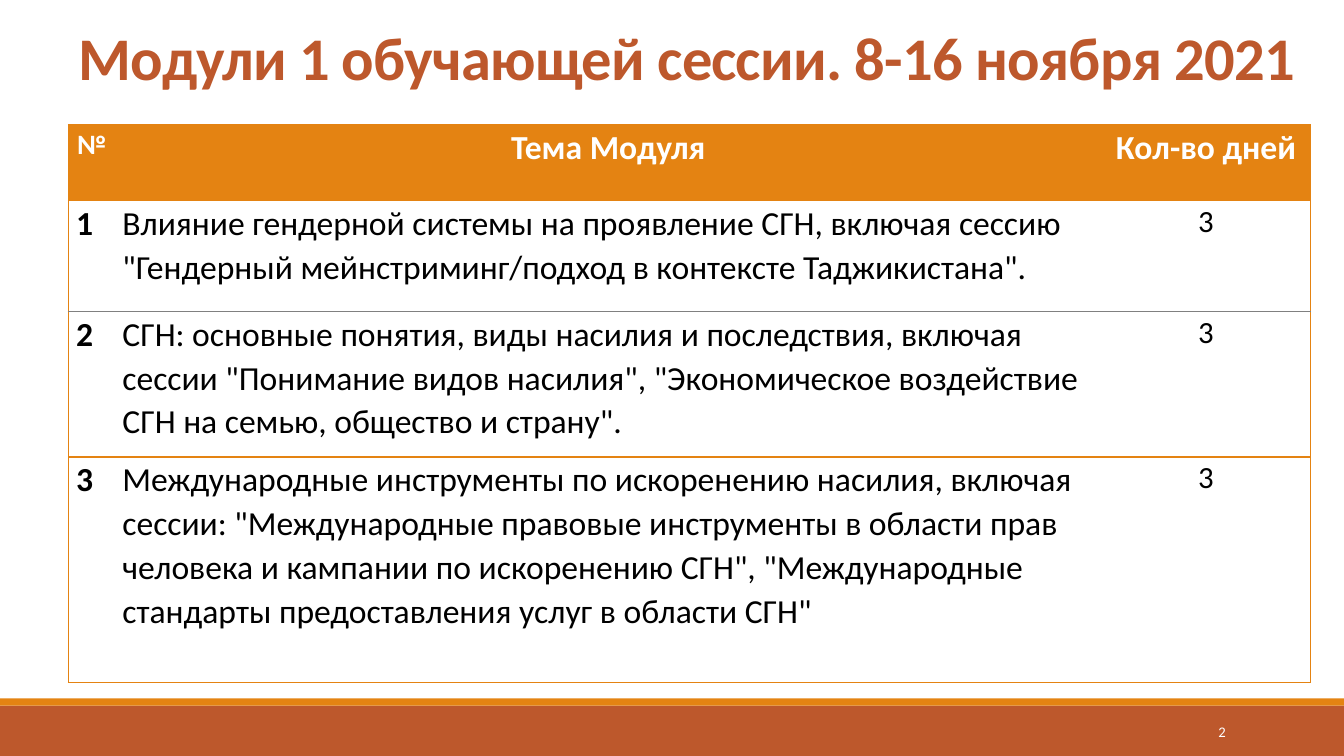
from dataclasses import dataclass

from lxml import etree
from pptx import Presentation
from pptx.dml.color import RGBColor
from pptx.enum.shapes import MSO_SHAPE
from pptx.enum.text import MSO_ANCHOR, PP_ALIGN
from pptx.oxml.ns import qn
from pptx.util import Pt

RECT = MSO_SHAPE.RECTANGLE
TOP, MIDDLE = MSO_ANCHOR.TOP, MSO_ANCHOR.MIDDLE
LEFT, CENTER, RIGHT = PP_ALIGN.LEFT, PP_ALIGN.CENTER, PP_ALIGN.RIGHT


@dataclass(frozen=True)
class Theme:
    font: str = "Calibri"
    rust: str = "BD582C"
    orange: str = "E48312"
    grey: str = "808080"
    white: str = "FFFFFF"
    black: str = "000000"
    title: float = 43.2
    mark: float = 20
    body: float = 24
    days: float = 22
    number: float = 10.5


THEME = Theme()
SLIDE_W, SLIDE_H = 960, 540
TABLE_X, TABLE_Y = 48.96, 89.28
COLUMNS = (33.12, 704.88, 149.04)
ROWS = (54, 79.2, 104, 161.3)

HEADER = ("№", "Тема Модуля", "Кол-во дней")
MODULES = (
    ("1", 'Влияние гендерной системы на проявление СГН, включая сессию '
          '"Гендерный мейнстриминг/подход в контексте Таджикистана".', "3"),
    ("2", 'СГН: основные понятия, виды насилия и последствия, включая сессии '
          '"Понимание видов насилия", "Экономическое воздействие СГН на семью, '
          'общество и страну".', "3"),
    ("3", 'Международные инструменты по искоренению насилия, включая сессии: '
          '"Международные правовые инструменты в области прав человека и кампании '
          'по искоренению СГН", "Международные стандарты предоставления услуг '
          'в области СГН"', "3"),
)


def add_run(p, text, size, color, bold=False):
    r = p.add_run()
    r.text = text
    r.font.name = THEME.font
    r.font.size = Pt(size)
    r.font.bold = bold
    r.font.color.rgb = RGBColor.from_string(color)
    return r


def add_band(s, top, height, color):
    band = s.shapes.add_shape(RECT, Pt(0), Pt(top), Pt(SLIDE_W), Pt(height))
    band.shadow.inherit = False
    band.fill.solid()
    band.fill.fore_color.rgb = RGBColor.from_string(color)
    band.line.fill.background()


def set_title(s, text):
    title = s.shapes.title
    title.left, title.top = Pt(TABLE_X), Pt(22.3)
    title.width, title.height = Pt(sum(COLUMNS)), Pt(92.2)
    tf = title.text_frame
    tf.word_wrap = True
    tf.vertical_anchor = TOP
    tf.margin_top = Pt(0)
    p = tf.paragraphs[0]
    p.alignment = LEFT
    p.line_spacing = 0.85
    r = add_run(p, text, THEME.title, THEME.rust, True)
    r.font._element.set("spc", "-50")


def set_border(cell, side, color=None, width=1):
    tcPr = cell._tc.get_or_add_tcPr()
    ln = etree.SubElement(tcPr, qn(f"a:ln{side}"))
    if color is None:
        ln.set("w", "0")
        etree.SubElement(ln, qn("a:noFill"))
        return
    ln.set("w", str(Pt(width)))
    fill = etree.SubElement(ln, qn("a:solidFill"))
    etree.SubElement(fill, qn("a:srgbClr")).set("val", color)


def row_rule(edge):
    """Colour and width of the horizontal rule above row number edge."""
    return (THEME.grey, 0.5) if edge == 2 else (THEME.orange, 1)


def format_cell(cell, row, col):
    # Borders come before the fill in the cell properties
    set_border(cell, "L", THEME.orange if col == 0 else None)
    set_border(cell, "R", THEME.orange if col == len(COLUMNS) - 1 else None)
    set_border(cell, "T", *row_rule(row))
    set_border(cell, "B", *row_rule(row + 1))
    if row == 0:
        cell.fill.solid()
        cell.fill.fore_color.rgb = RGBColor.from_string(THEME.orange)
    else:
        cell.fill.background()
    cell.margin_left = cell.margin_right = Pt(5.4)
    cell.margin_top = cell.margin_bottom = Pt(0)
    cell.vertical_anchor = TOP


def fill_cell(cell, text, row, col):
    header = row == 0
    if header:
        size = THEME.mark if col == 0 else THEME.body
    else:
        size = THEME.days if col == 2 else THEME.body
    p = cell.text_frame.paragraphs[0]
    p.alignment = CENTER if header or col == 2 else LEFT
    p.line_spacing = 1.07
    p.space_after = Pt(8)
    color = THEME.white if header else THEME.black
    add_run(p, text, size, color, header or col == 0)


def add_modules_table(s):
    frame = s.shapes.add_table(len(ROWS), len(COLUMNS), Pt(TABLE_X), Pt(TABLE_Y),
                               Pt(sum(COLUMNS)), Pt(sum(ROWS)))
    table = frame.table
    table.horz_banding = False
    for column, width in zip(table.columns, COLUMNS):
        column.width = Pt(width)
    for row, (height, texts) in enumerate(zip(ROWS, (HEADER, *MODULES))):
        table.rows[row].height = Pt(height)
        for col, text in enumerate(texts):
            cell = table.cell(row, col)
            format_cell(cell, row, col)
            fill_cell(cell, text, row, col)


def add_slide_number(s, text):
    box = s.shapes.add_textbox(Pt(779.76), Pt(508.3), Pt(102.96), Pt(28.8))
    tf = box.text_frame
    tf.word_wrap = True
    tf.vertical_anchor = MIDDLE
    p = tf.paragraphs[0]
    p.alignment = RIGHT
    add_run(p, text, THEME.number, THEME.white)


def main():
    prs = Presentation()
    prs.slide_width, prs.slide_height = Pt(SLIDE_W), Pt(SLIDE_H)
    s = prs.slides.add_slide(prs.slide_layouts[5])

    # Footer bands
    add_band(s, 504, 36, THEME.rust)
    add_band(s, 498.96, 5.04, THEME.orange)

    # Title, table of modules and slide number
    set_title(s, "Модули 1 обучающей сессии. 8-16 ноября 2021")
    add_modules_table(s)
    add_slide_number(s, "2")

    prs.save("out.pptx")


if __name__ == "__main__":
    main()
